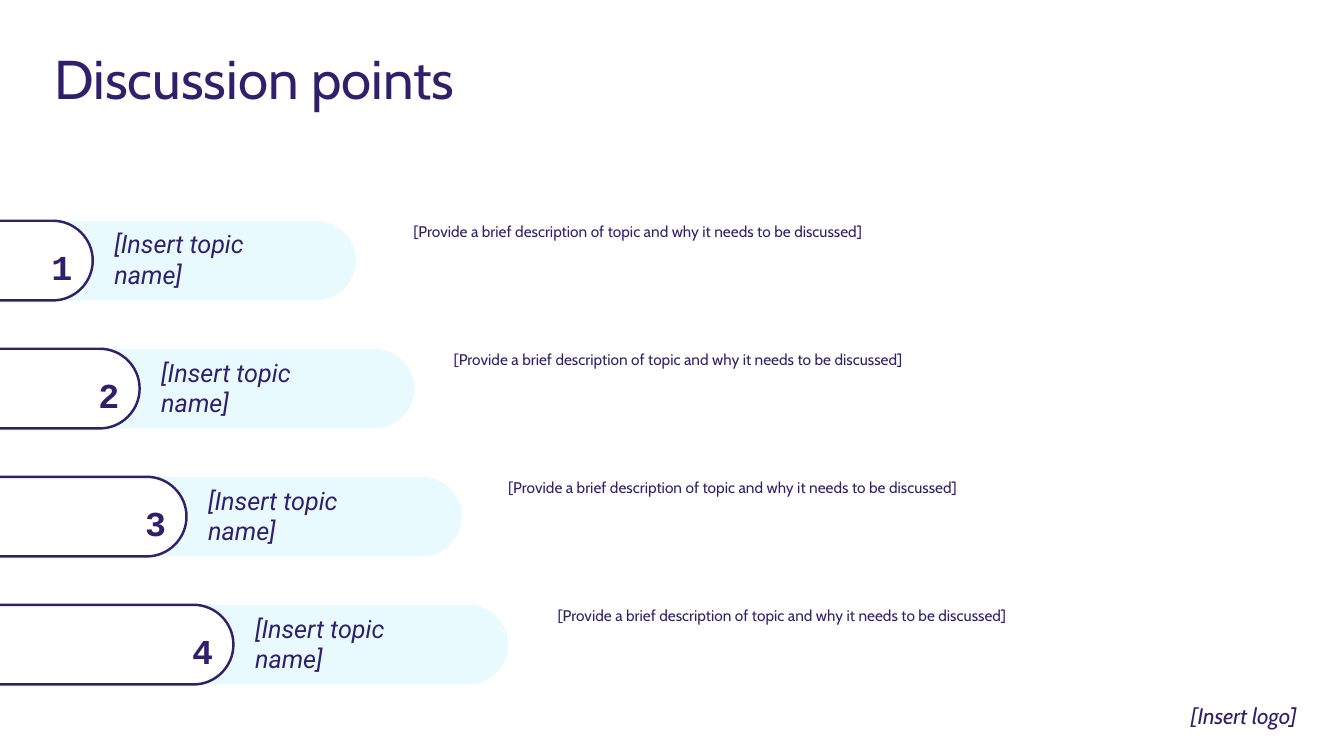
from pptx import Presentation
from pptx.dml.color import RGBColor
from pptx.enum.shapes import MSO_SHAPE
from pptx.enum.text import MSO_ANCHOR, PP_ALIGN
from pptx.oxml.ns import qn
from pptx.util import Inches, Pt
from lxml.etree import SubElement

# Content
TITLE = "Discussion points"
LOGO_TEXT = "[Insert logo]"
DESCRIPTION = "[Provide a brief description of topic and why it needs to be discussed]"
# number, topic, description, right edge of bar, left edge of description
POINTS = [
    ("1", "[Insert topic name]", DESCRIPTION, 3.53, 4.1),
    ("2", "[Insert topic name]", DESCRIPTION, 4.11, 4.5),
    ("3", "[Insert topic name]", DESCRIPTION, 4.58, 5.04),
    ("4", "[Insert topic name]", DESCRIPTION, 5.04, 5.53),
]

# Colours
WHITE = RGBColor(0xFF, 0xFF, 0xFF)
PALE_BLUE = RGBColor(0xE9, 0xFA, 0xFF)
TEXT_INDIGO = RGBColor(0x30, 0x20, 0x6B)
LINE_INDIGO = RGBColor(0x31, 0x21, 0x6B)

# Layout in inches
FIRST_TOP = 2.19
ROW_PITCH = 1.27
STEP = 0.465
BAR_HEIGHT = 0.79
ARC_HANDLE = 0.55  # control point distance of a quarter circle, in radii

presentation = Presentation()
presentation.slide_width = Inches(13.33)
presentation.slide_height = Inches(7.5)
slide = presentation.slides.add_slide(presentation.slide_layouts[6])


def bend_segment(segment, control_points):
    """Turn a straight outline segment into a curve with two control points."""
    segment.tag = qn("a:cubicBezTo")
    for position, (x, y) in enumerate(control_points):
        point = SubElement(segment, qn("a:pt"))
        point.set("x", str(int(Inches(x))))
        point.set("y", str(int(Inches(y))))
        segment.insert(position, point)


def add_round_ended_bar(left, top, right, fill, line=None):
    """Bar with a square left end and a half-round right end."""
    radius = BAR_HEIGHT / 2
    handle = ARC_HANDLE * radius
    width = right - left
    corners = [
        (width - radius, 0), (width, radius),
        (width - radius, BAR_HEIGHT), (0, BAR_HEIGHT),
    ]
    builder = slide.shapes.build_freeform(0, 0)
    builder.add_line_segments(
        [(Inches(x), Inches(y)) for x, y in corners], close=line is None
    )
    shape = builder.convert_to_shape(Inches(left), Inches(top))
    segments = list(shape.element.iter(qn("a:lnTo")))
    bend_segment(segments[1], [(width - radius + handle, 0), (width, radius - handle)])
    bend_segment(segments[2], [(width, radius + handle),
                               (width - radius + handle, BAR_HEIGHT)])
    shape.shadow.inherit = False
    shape.fill.solid()
    shape.fill.fore_color.rgb = fill
    if line is None:
        shape.line.fill.background()
    else:
        shape.line.color.rgb = line
        shape.line.width = Pt(1.75)


def set_text(shape, text, size, font, bold=False, italic=False, spacing=1.0,
             anchor=MSO_ANCHOR.TOP, align=PP_ALIGN.LEFT):
    frame = shape.text_frame
    frame.text = text
    frame.word_wrap = True
    frame.vertical_anchor = anchor
    frame.margin_left = frame.margin_right = 0
    frame.margin_top = frame.margin_bottom = 0
    paragraph = frame.paragraphs[0]
    paragraph.alignment = align
    paragraph.line_spacing = spacing
    run_font = paragraph.runs[0].font
    run_font.name = font
    run_font.size = Pt(size)
    run_font.bold = bold
    run_font.italic = italic
    run_font.color.rgb = TEXT_INDIGO


def add_text_box(left, top, width, height, text, size, font, **style):
    box = slide.shapes.add_textbox(
        Inches(left), Inches(top), Inches(width), Inches(height)
    )
    set_text(box, text, size, font, **style)
    return box


# Discussion points, each row stepped to the right
for index, (number, topic, description, bar_right, text_left) in enumerate(POINTS):
    top = FIRST_TOP + index * ROW_PITCH
    shift = index * STEP
    add_round_ended_bar(shift, top, bar_right, PALE_BLUE)
    add_round_ended_bar(-0.01, top, 0.92 + shift, WHITE, LINE_INDIGO)

    topic_shape = slide.shapes.add_shape(
        MSO_SHAPE.ROUNDED_RECTANGLE,
        Inches(1.08 + shift), Inches(top - 0.01), Inches(2.1), Inches(0.78),
    )
    topic_shape.adjustments[0] = 0.24
    topic_shape.shadow.inherit = False
    topic_shape.fill.background()
    topic_shape.line.fill.background()
    set_text(topic_shape, topic, 18, "Roboto", italic=True, anchor=MSO_ANCHOR.MIDDLE)

    add_text_box(0.51 + shift, top + 0.19, 0.75, 0.42, number, 25, "Courier New",
                 bold=True, spacing=1.13)
    add_text_box(text_left, top - 0.01, 6.21, 0.52, description, 11, "Cabin",
                 spacing=1.14)

# Title and logo text
add_text_box(0.54, 0.52, 12.27, 0.66, TITLE, 39, "Cabin", spacing=0.9)
logo_box = add_text_box(11.63, 6.72, 1.54, 0.44, LOGO_TEXT, 16, "Cabin",
                        italic=True, spacing=0.9, align=PP_ALIGN.CENTER)
logo_box.text_frame.margin_top = Inches(0.32)
logo_box.text_frame.margin_right = Inches(0.13)

presentation.save("out.pptx")
